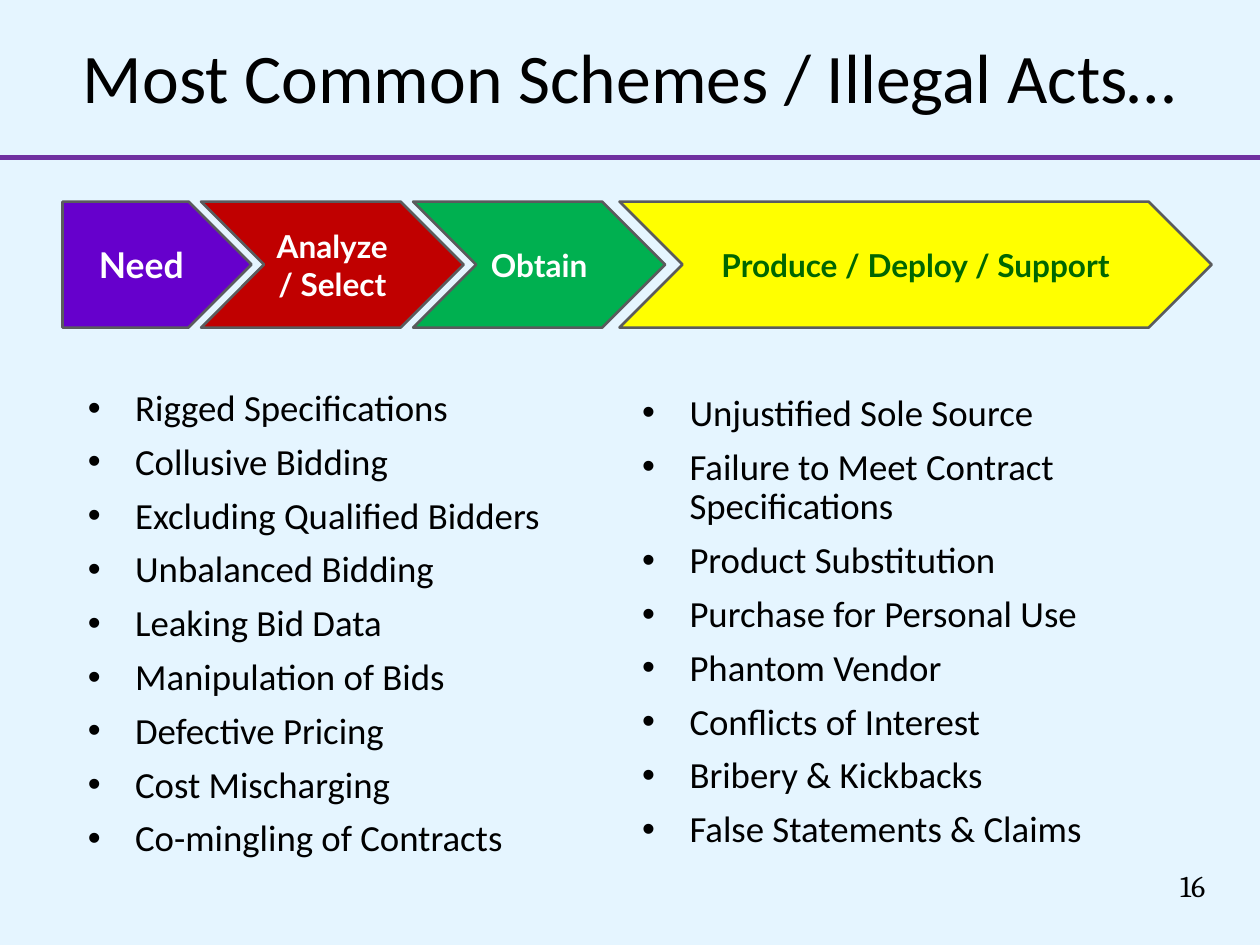
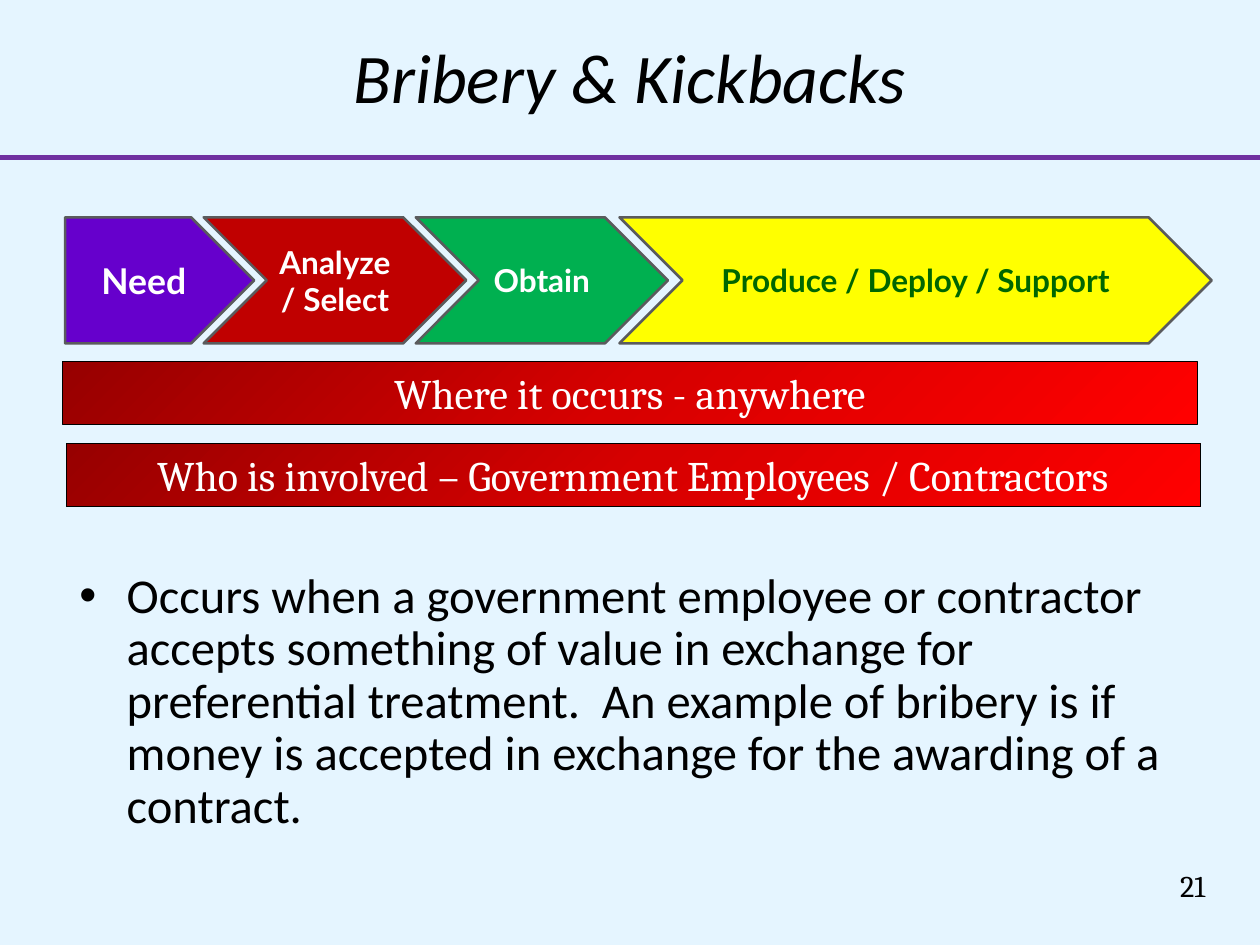
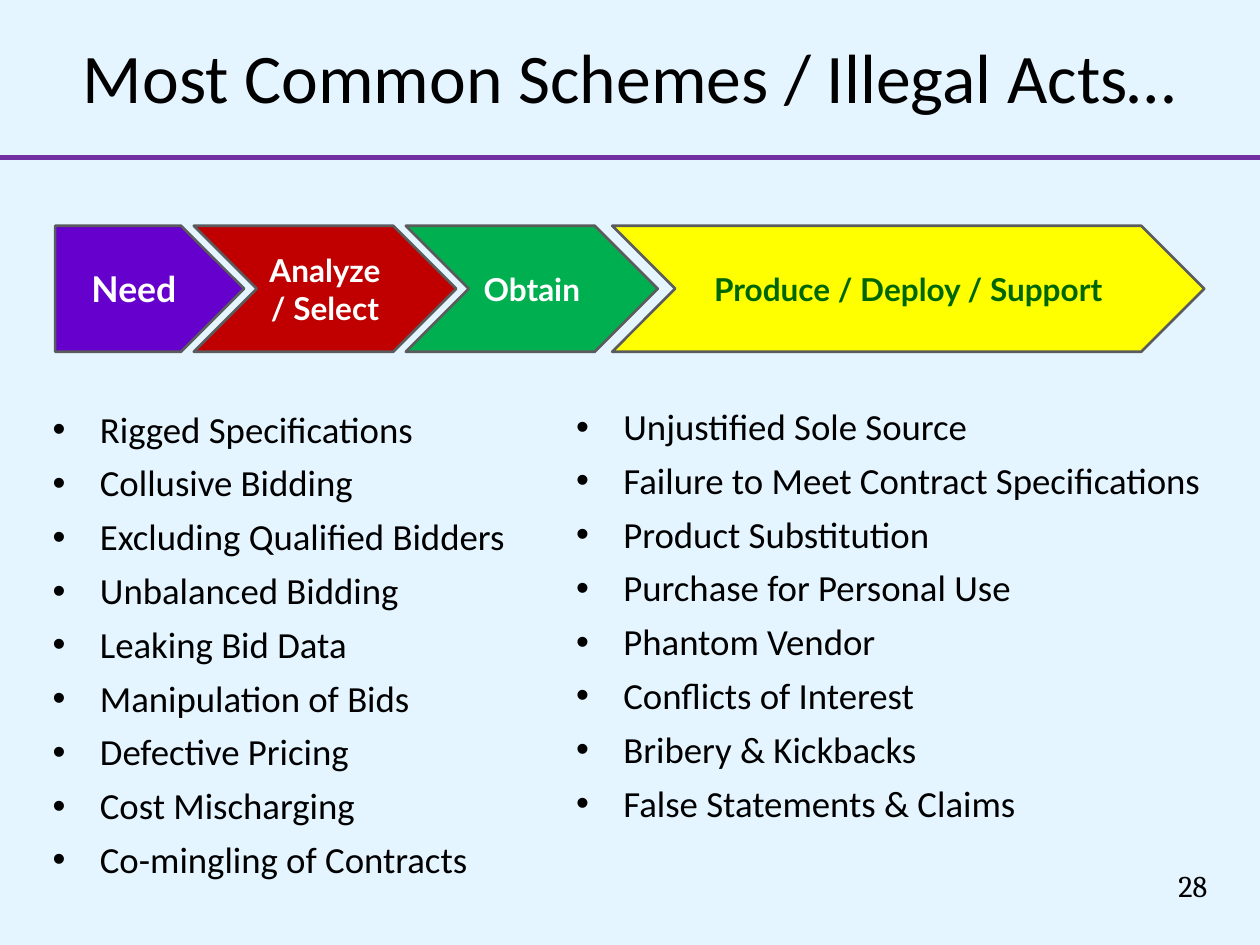
from copy import deepcopy
from dataclasses import dataclass

from lxml.etree import SubElement
from pptx import Presentation
from pptx.dml.color import RGBColor
from pptx.enum.shapes import MSO_CONNECTOR, MSO_SHAPE
from pptx.enum.text import MSO_ANCHOR, PP_ALIGN
from pptx.oxml.ns import qn
from pptx.util import Inches, Pt

CELL = 0.111
COLUMNS, ROWS = 120, 90
COLORS = {
    "background": "E5F5FF",
    "text": "000000",
    "rule": "7030A0",
    "outline": "5A5B5D",
    "white": "FFFFFF",
    "need": "6600CC",
    "analyze": "C00000",
    "obtain": "00B050",
    "produce": "FFFF00",
    "produce_text": "006600",
}
BAR_STOPS = [(0, "970000"), (0.5, "D70000"), (1, "FF0000")]
TITLE = "Most Common Schemes / Illegal Acts…"
BIDDING_SCHEMES = [
    "Rigged Specifications",
    "Collusive Bidding",
    "Excluding Qualified Bidders",
    "Unbalanced Bidding",
    "Leaking Bid Data",
    "Manipulation of Bids",
    "Defective Pricing",
    "Cost Mischarging",
    "Co-mingling of Contracts",
]
CONTRACT_SCHEMES = [
    "Unjustified Sole Source",
    "Failure to Meet Contract Specifications",
    "Product Substitution",
    "Purchase for Personal Use",
    "Phantom Vendor",
    "Conflicts of Interest",
    "Bribery & Kickbacks",
    "False Statements & Claims",
]
BRIBERY_BARS = [
    "Where it occurs - anywhere",
    "Who is involved – Government Employees / Contractors",
]
BRIBERY_TEXT = (
    "Occurs when a government employee or contractor accepts something of value "
    "in exchange for preferential treatment.  An example of bribery is if money "
    "is accepted in exchange for the awarding of a contract."
)
STAGES = [
    (["Need"], 18, 27, "need", "white"),
    (["Analyze", "/ Select"], 25, 24, "analyze", "white"),
    (["Obtain"], 24, 24, "obtain", "white"),
    (["Produce / Deploy / Support"], 56.4, 24, "produce", "produce_text"),
]
STAGE_OVERLAP = 4.8


@dataclass
class Box:
    """A region in columns and rows of the slide grid."""

    left: float
    top: float
    width: float
    height: float

    def inches(self):
        """Return left, top, width and height as lengths."""
        return [Inches(cells * CELL) for cells in (self.left, self.top, self.width, self.height)]


def color(name):
    """Return the named colour."""
    return RGBColor.from_string(COLORS[name])


def set_frame(frame, anchor, side, edge, wrap=True):
    """Set the anchor, margins and wrapping of a text frame."""
    frame.vertical_anchor = anchor
    frame.word_wrap = wrap
    frame.margin_left = frame.margin_right = Inches(side)
    frame.margin_top = frame.margin_bottom = Inches(edge)


def style(para, face, size, ink="text", bold=False, italic=False):
    """Set the font of a whole paragraph."""
    font = para.font
    font.name, font.size, font.bold, font.italic = face, Pt(size), bold, italic
    font.color.rgb = color(ink)


def write_centered(frame, lines, *font, **options):
    """Write one centred paragraph with a break between its lines."""
    para = frame.paragraphs[0]
    para.alignment = PP_ALIGN.CENTER
    for index, line in enumerate(lines):
        if index:
            para.add_line_break()
        para.add_run().text = line
    style(para, *font, **options)


def add_preset(shapes, kind, box):
    """Add a preset shape without a shadow."""
    shape = shapes.add_shape(kind, *box.inches())
    shape.shadow.inherit = False
    return shape


def add_title(page, box, title, italic):
    """Add the slide title and the rule that closes its band."""
    frame = page.shapes.add_textbox(*box.inches()).text_frame
    set_frame(frame, MSO_ANCHOR.MIDDLE, 0.13, 0.07)
    write_centered(frame, [title], "Calibri", 53, italic=italic)
    height = Inches((box.top + box.height + 0.6) * CELL)
    rule = page.shapes.add_connector(
        MSO_CONNECTOR.STRAIGHT, 0, height, Inches(box.width * CELL), height
    )
    rule.line.color.rgb = color("rule")
    rule.line.width = Pt(3.25)
    SubElement(rule._element.spPr, qn("a:effectLst"))


def add_number(page, box, number):
    """Add the slide number in an unfilled circle."""
    circle = add_preset(page.shapes, MSO_SHAPE.OVAL, box)
    circle.fill.background()
    circle.line.fill.background()
    set_frame(circle.text_frame, MSO_ANCHOR.MIDDLE, 0.01, 0.01)
    write_centered(circle.text_frame, [str(number)], "Cambria", 23)


def add_page(deck, title, number, italic=False):
    """Add a slide with the parts that all slides share."""
    page = deck.slides.add_slide(deck.slide_layouts[6])
    page.background.fill.solid()
    page.background.fill.fore_color.rgb = color("background")
    add_title(page, Box(0, 0, COLUMNS, 14.4), title, italic)
    add_number(page, Box(110.3, 81, 6.6, 6.6), number)
    return page


def add_stages(page, box):
    """Add the chain of stages, with the last one flush right in the box."""
    strip = page.shapes.add_group_shape()
    left = box.left
    for index, (lines, width, size, fill, ink) in enumerate(STAGES):
        if index == len(STAGES) - 1:
            left = box.left + box.width - width
        kind = MSO_SHAPE.CHEVRON if index else MSO_SHAPE.PENTAGON
        stage = add_preset(strip.shapes, kind, Box(left, box.top, width, box.height))
        stage.fill.solid()
        stage.fill.fore_color.rgb = color(fill)
        stage.line.color.rgb = color("outline")
        stage.line.width = Pt(2)
        set_frame(stage.text_frame, MSO_ANCHOR.MIDDLE, 0, 0)
        write_centered(stage.text_frame, lines, "Lato", size, ink, bold=True)
        left += width - STAGE_OVERLAP


def fill_bar(bar):
    """Give a bar its diagonal gradient of three stops."""
    bar.fill.gradient()
    bar.fill.gradient_angle = 315
    stop_list = bar._element.spPr.find(qn("a:gradFill")).find(qn("a:gsLst"))
    stop_list.insert(1, deepcopy(stop_list[0]))
    for stop, (position, shade) in zip(bar.fill.gradient_stops, BAR_STOPS):
        stop.position = position
        stop.color.rgb = RGBColor.from_string(shade)


def add_bars(page, box, texts):
    """Add bars downwards from the box, each a little further right."""
    for index, text in enumerate(texts):
        place = Box(box.left + 0.3 * index, box.top + 7.85 * index, box.width, box.height)
        bar = add_preset(page.shapes, MSO_SHAPE.FLOWCHART_PROCESS, place)
        fill_bar(bar)
        bar.line.color.rgb = color("text")
        bar.line.width = Pt(0.75)
        set_frame(bar.text_frame, MSO_ANCHOR.MIDDLE, 0.13, 0.07, wrap=False)
        write_centered(bar.text_frame, [text], "Cambria", 32, "white")


def add_bullets(page, box, items, size=28):
    """Add a bulleted list that fills the box."""
    frame = page.shapes.add_textbox(*box.inches()).text_frame
    set_frame(frame, MSO_ANCHOR.TOP, 0.13, 0.07)
    for index, item in enumerate(items):
        para = frame.add_paragraph() if index else frame.paragraphs[0]
        para.text = item
        properties = para._p.get_or_add_pPr()
        properties.set("marL", str(Inches(0.5)))
        properties.set("indent", str(-Inches(0.5)))
        SubElement(properties, qn("a:buFont")).set("typeface", "Arial")
        SubElement(properties, qn("a:buChar")).set("char", "•")
        para.line_spacing = 0.9
        para.space_before = Pt(10.7 if index else 0)
        style(para, "Calibri", size)


def add_schemes_page(deck, number, stages, left_list, right_list):
    """Add a slide with the stages above two lists of schemes."""
    page = add_page(deck, TITLE, number)
    add_bullets(page, left_list, BIDDING_SCHEMES)
    add_bullets(page, right_list, CONTRACT_SCHEMES)
    add_stages(page, stages)


def add_bribery_page(deck, number):
    """Add the slide that explains bribery and kickbacks."""
    page = add_page(deck, "Bribery & Kickbacks", number, italic=True)
    add_bullets(page, Box(6.4, 53.8, 107.2, 27.9), [BRIBERY_TEXT], size=37)
    add_stages(page, Box(6.2, 20.7, 109.2, 12))
    add_bars(page, Box(6, 34.4, 108, 6), BRIBERY_BARS)


def main():
    """Build the deck and save it."""
    deck = Presentation()
    deck.slide_width = Inches(COLUMNS * CELL)
    deck.slide_height = Inches(ROWS * CELL)
    add_schemes_page(
        deck,
        16,
        Box(5.95, 19.2, 109.45, 12),
        Box(7.2, 36.5, 55.6, 44.4),
        Box(60, 36.95, 60, 44.9),
    )
    add_bribery_page(deck, 21)
    add_schemes_page(
        deck,
        28,
        Box(5.25, 21.5, 109.45, 12),
        Box(3.85, 38.55, 55.6, 44.4),
        Box(53.7, 38.3, 66.3, 44.9),
    )
    deck.save("out.pptx")


if __name__ == "__main__":
    main()
